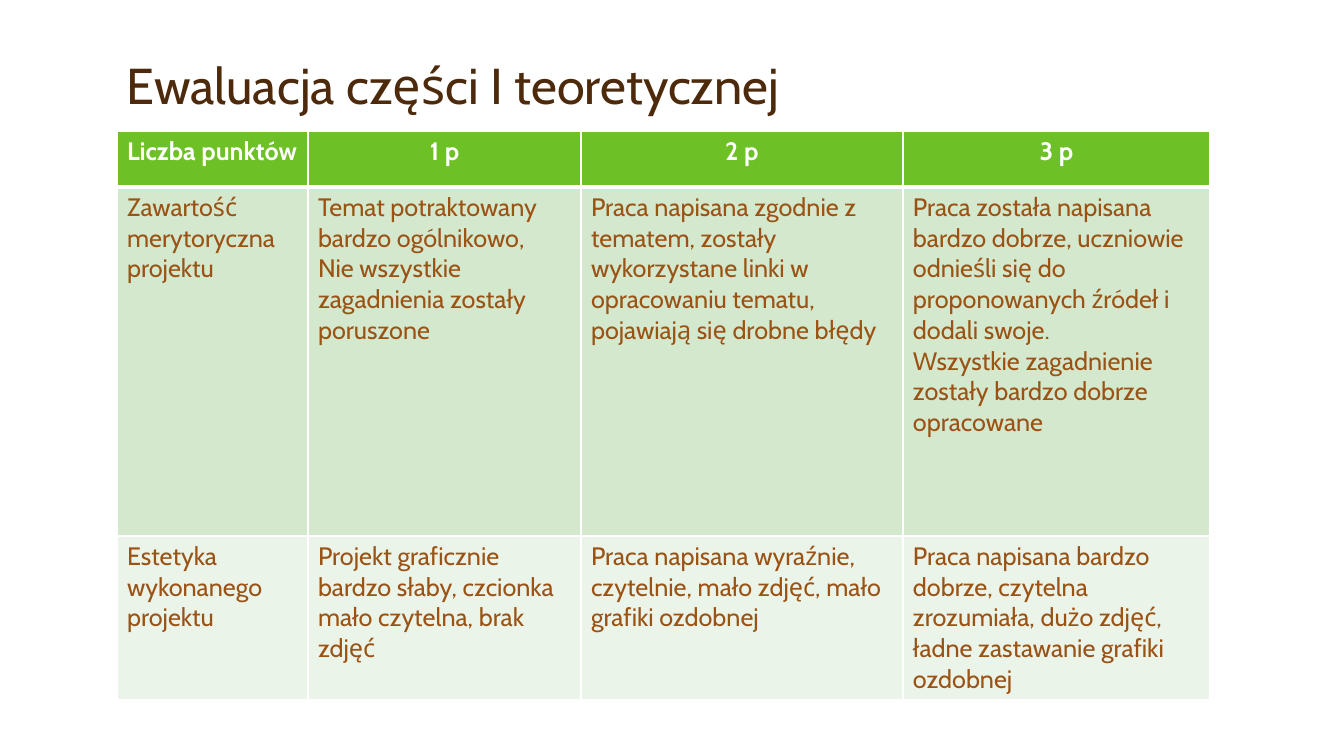
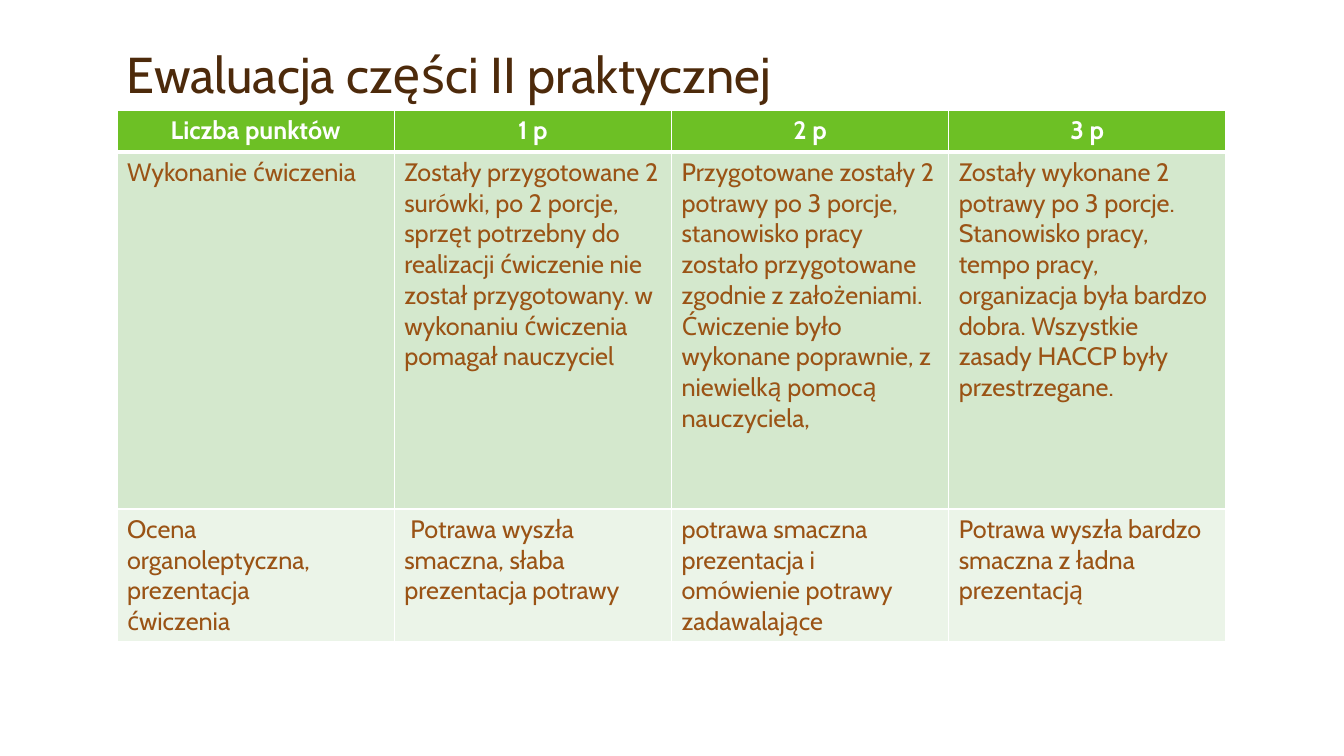
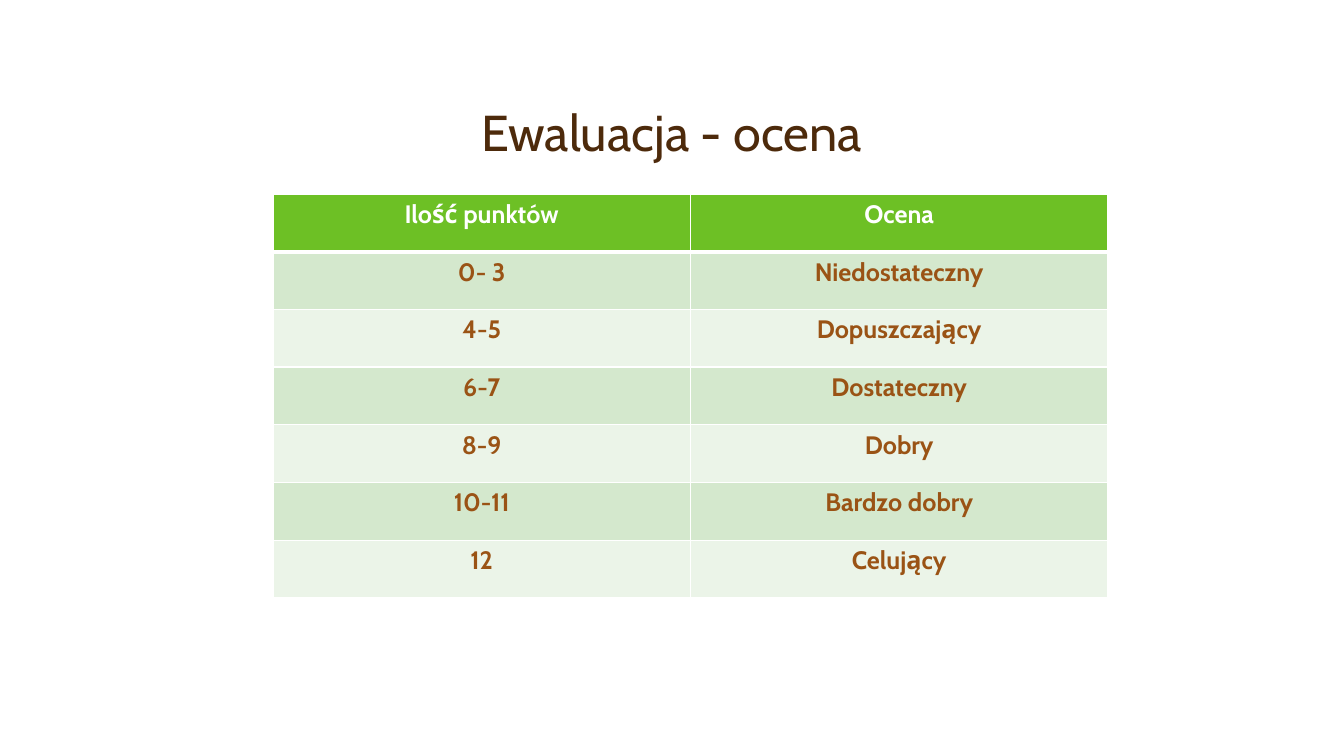
from lxml import etree
from pptx import Presentation
from pptx import util as u
from pptx.dml.color import RGBColor
from pptx.enum import text
from pptx.oxml import ns

SCALE = 914400 / 100.8
LEFT = text.PP_ALIGN.LEFT
CENTER = text.PP_ALIGN.CENTER


def px(length):
    return u.Emu(round(length * SCALE))


def color(value):
    return RGBColor.from_string(value)


class Deck:
    FONT = "Cabin"
    TITLE = "4D2A0B"
    BODY = "9A5315"
    WHITE = "FFFFFF"
    HEADER = "6DC025"
    BANDS = ("D4E8CD", "EBF4E8")
    MARGIN = 117
    TITLE_TOP = 33
    WIDTH = 1109

    def __init__(self):
        self.presentation = Presentation()
        self.presentation.slide_width = px(1344)
        self.presentation.slide_height = px(756)
        self.slide = None

    def new_slide(self):
        self.slide = self.presentation.slides.add_slide(self.presentation.slide_layouts[6])
        background = self.slide.background.fill
        background.solid()
        background.fore_color.rgb = color(self.WHITE)

    def set_text(self, frame, content, size, ink, alignment, bold=False):
        frame.text = content
        for paragraph in frame.paragraphs:
            paragraph.alignment = alignment
            for run in paragraph.runs:
                run.font.name = self.FONT
                run.font.size = u.Pt(size)
                run.font.bold = bold
                run.font.color.rgb = color(ink)

    def title(self, content, height, alignment=LEFT):
        shape = self.slide.shapes.add_textbox(
            px(self.MARGIN), px(self.TITLE_TOP), px(self.WIDTH), px(height))
        frame = shape.text_frame
        frame.word_wrap = True
        frame.vertical_anchor = text.MSO_ANCHOR.BOTTOM
        self.set_text(frame, content, 36, self.TITLE, alignment)
        frame.paragraphs[0].line_spacing = 0.9

    def border(self, cell, side, points):
        properties = cell._tc.get_or_add_tcPr()
        line = etree.SubElement(properties, ns.qn(f"a:ln{side}"), w=str(u.Pt(points)))
        fill = etree.SubElement(line, ns.qn("a:solidFill"))
        etree.SubElement(fill, ns.qn("a:srgbClr"), val=self.WHITE)

    def table(self, left, top, width, height, rows, columns=(), heights=(),
              alignment=LEFT, bold=False):
        table = self.slide.shapes.add_table(
            len(rows), len(rows[0]), px(left), px(top), px(width), px(height)).table
        for column, size in zip(table.columns, columns):
            column.width = px(size)
        for row, size in zip(table.rows, heights):
            row.height = px(size)
        for index, row in enumerate(rows):
            header = index == 0
            for cell, content in zip(table.rows[index].cells, row):
                self.border(cell, "L", 1)
                self.border(cell, "R", 1)
                self.border(cell, "T", 3 if index == 1 else 1)
                self.border(cell, "B", 3 if header else 1)
                cell.fill.solid()
                cell.fill.fore_color.rgb = color(
                    self.HEADER if header else self.BANDS[(index - 1) % 2])
                self.set_text(cell.text_frame, content, 18,
                              self.WHITE if header else self.BODY,
                              CENTER if header else alignment, header or bold)
        return table


def theory(deck):
    deck.new_slide()
    deck.title("Ewaluacja części I teoretycznej", 87)
    table = deck.table(117, 131, 1093, 569, [
        ["Liczba punktów", "1 p", "2 p", "3 p"],
        ["Zawartość merytoryczna projektu",
         "Temat potraktowany bardzo ogólnikowo,\n"
         "Nie wszystkie zagadnienia zostały poruszone",
         "Praca napisana zgodnie z tematem, zostały wykorzystane linki "
         "w opracowaniu tematu, pojawiają się drobne błędy",
         "Praca została napisana bardzo dobrze, uczniowie odnieśli się do "
         "proponowanych źródeł i dodali swoje.\n"
         "Wszystkie zagadnienie zostały bardzo dobrze opracowane"],
        ["Estetyka wykonanego projektu",
         "Projekt graficznie bardzo słaby, czcionka mało czytelna, brak zdjęć",
         "Praca napisana wyraźnie, czytelnie, mało zdjęć, mało grafiki ozdobnej",
         "Praca napisana bardzo dobrze, czytelna zrozumiała, dużo zdjęć, "
         "ładne zastawanie grafiki ozdobnej"],
    ], columns=(191, 273, 322, 307), heights=(56, 349, 164))
    table.cell(0, 0).text_frame.paragraphs[0].alignment = LEFT


def practice(deck):
    deck.new_slide()
    deck.title("Ewaluacja części II praktycznej", 76)
    table = deck.table(117, 110, 1109, 532, [
        ["Liczba punktów", "1 p", "2 p", "3 p"],
        ["Wykonanie ćwiczenia",
         "Zostały przygotowane 2 surówki, po 2 porcje, sprzęt potrzebny do "
         "realizacji ćwiczenie nie został przygotowany. w wykonaniu ćwiczenia "
         "pomagał nauczyciel",
         "Przygotowane zostały 2 potrawy po 3 porcje, stanowisko pracy zostało "
         "przygotowane zgodnie z założeniami. Ćwiczenie było wykonane "
         "poprawnie, z niewielką pomocą nauczyciela,",
         "Zostały wykonane 2 potrawy po 3 porcje. Stanowisko pracy, tempo "
         "pracy, organizacja była bardzo dobra. Wszystkie zasady HACCP były "
         "przestrzegane."],
        ["Ocena organoleptyczna,\nprezentacja\nćwiczenia",
         "Potrawa wyszła smaczna, słaba prezentacja potrawy",
         "potrawa smaczna prezentacja i omówienie potrawy zadawalające",
         "Potrawa wyszła bardzo smaczna z ładna prezentacją"],
    ], heights=(42, 357, 133))
    paragraph = table.cell(2, 1).text_frame.paragraphs[0]
    paragraph._p.get_or_add_pPr().set("indent", str(px(6)))


def grades(deck):
    deck.new_slide()
    deck.title("Ewaluacja - ocena", 134, CENTER)
    deck.table(273, 194, 835, 404, [
        ["Ilość punktów", "Ocena"],
        ["0- 3", "Niedostateczny"],
        ["4-5", "Dopuszczający"],
        ["6-7", "Dostateczny"],
        ["8-9", "Dobry"],
        ["10-11", "Bardzo dobry"],
        ["12", "Celujący"],
    ], alignment=CENTER, bold=True)


def main():
    deck = Deck()
    theory(deck)
    practice(deck)
    grades(deck)
    deck.presentation.save("out.pptx")


if __name__ == "__main__":
    main()
